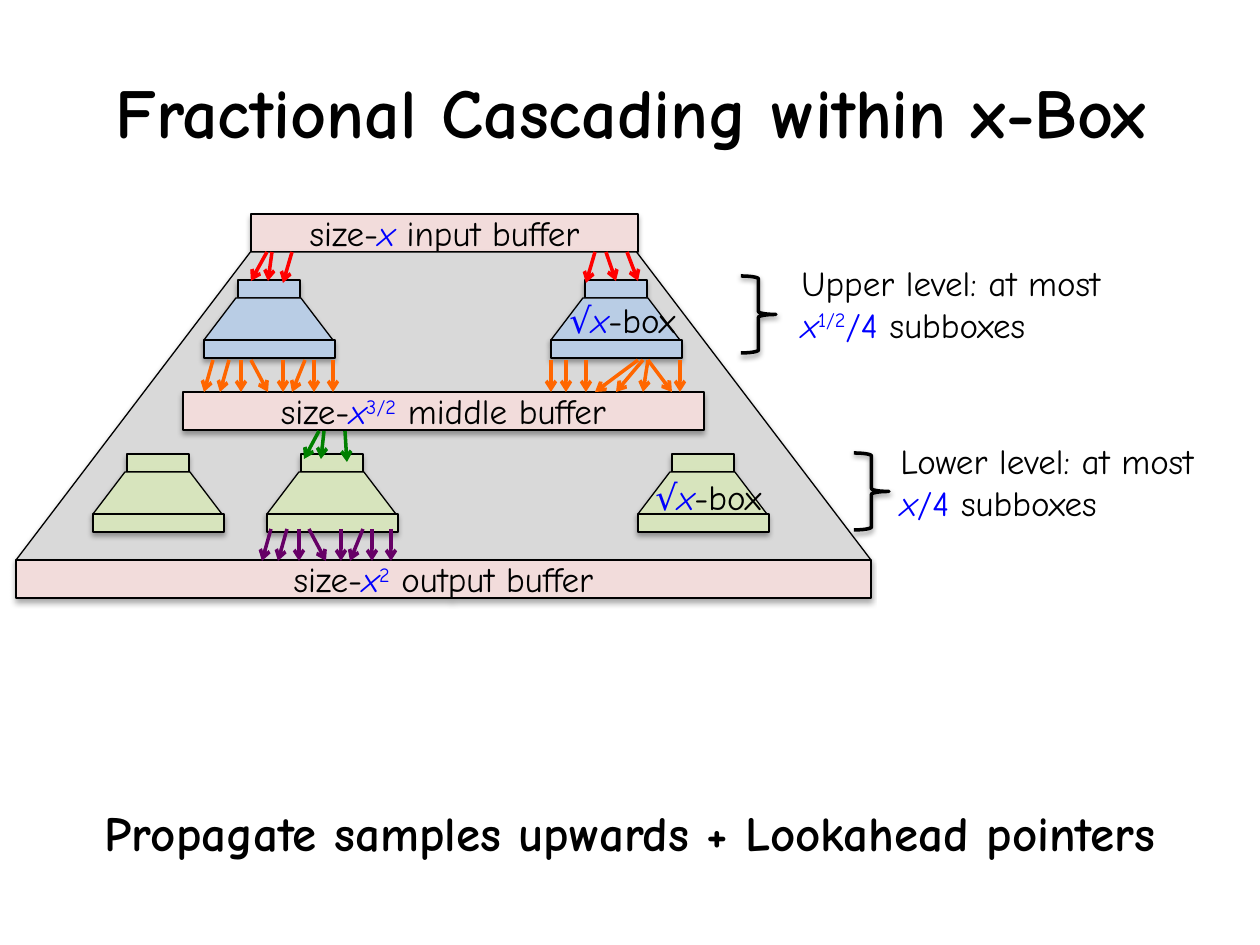
from lxml.etree import SubElement
from pptx import Presentation
from pptx.dml.color import RGBColor
from pptx.enum.shapes import MSO_CONNECTOR, MSO_SHAPE
from pptx.enum.text import MSO_ANCHOR as ANCHOR, PP_ALIGN as ALIGN
from pptx.oxml.ns import qn
from pptx.util import Emu, Pt

SCALE = 914400 // 126
FONT = "Comic Neue"
BLACK, BLUE = "000000", "0000FF"
PINK, GRAY, SKY, GREEN = "F2DCDB", "D9D9D9", "B9CDE5", "D7E4BD"
SLOPE = 0.761

X = ("x", BLUE, True, False)
SQRT_BOX = [("√", BLUE, False, False), X, ("-box", BLACK, False, False)]
FAN = [(213, 204), (229, 220), (241, 241), (251, 268),
       (283, 283), (305, 292), (314, 314), (333, 333)]
RIGHT_FAN = [(586, 586), (638, 595), (643, 616), (648, 643),
             (648, 672), (566, 566), (551, 551), (680, 680)]


def px(n):
    return Emu(n * SCALE)


def color(hex_text):
    return RGBColor.from_string(hex_text)


def plain(text):
    return (text, BLACK, False, False)


def blue(text, raised=False):
    return (text, BLUE, False, raised)


def write(tf, runs, size=20, align=ALIGN.LEFT, bold=False):
    p = tf.paragraphs[0]
    p.alignment = align
    p.font.name, p.font.size, p.font.bold = FONT, Pt(size), bold
    for text, hex_text, italic, raised in runs:
        r = p.add_run()
        r.text = text
        r.font.color.rgb = color(hex_text)
        r.font.italic = italic
        if raised:
            r.font._element.set("baseline", "30000")
    return p


def add_text(s, box, runs, wrap=True, anchor=ANCHOR.TOP, **style):
    tf = s.shapes.add_textbox(*map(px, box)).text_frame
    tf.word_wrap = wrap
    tf.vertical_anchor = anchor
    return write(tf, runs, **style)


def add_shadow(sp, alpha):
    sp.shadow.inherit = False
    effects = sp._element.spPr.find(qn("a:effectLst"))
    shadow = SubElement(effects, qn("a:outerShdw"), blurRad="39370", dist="22860",
                        dir="5400000", rotWithShape="0")
    tint = SubElement(shadow, qn("a:srgbClr"), val=BLACK)
    SubElement(tint, qn("a:alpha"), val=str(alpha * 1000))


def add_block(parent, kind, box, fill):
    sp = parent.shapes.add_shape(kind, *map(px, box))
    sp.fill.solid()
    sp.fill.fore_color.rgb = color(fill)
    sp.line.color.rgb = color(BLACK)
    sp.line.width = Pt(0.75)
    if kind == MSO_SHAPE.TRAPEZOID:
        sp.adjustments[0] = SLOPE
    add_shadow(sp, 35)
    return sp


def add_buffer(s, box, runs):
    tf = add_block(s, MSO_SHAPE.RECTANGLE, box, PINK).text_frame
    tf.vertical_anchor = ANCHOR.MIDDLE
    write(tf, runs, align=ALIGN.CENTER)


def add_subbox(s, x, y, fill):
    group = s.shapes.add_group_shape()
    add_block(group, MSO_SHAPE.RECTANGLE, (x + 34, y, 62, 18), fill)
    add_block(group, MSO_SHAPE.TRAPEZOID, (x, y + 18, 129, 42), fill)
    add_block(group, MSO_SHAPE.RECTANGLE, (x, y + 60, 131, 18), fill)


def add_brace(s, x, y):
    sp = s.shapes.add_shape(MSO_SHAPE.RIGHT_BRACE, px(x), px(y), px(35), px(77))
    sp.adjustments[0] = 0.083
    sp.fill.background()
    sp.line.color.rgb = color(BLACK)
    sp.line.width = Pt(2)
    add_shadow(sp, 38)


def add_arrows(s, pairs, top, bottom, hex_text, shift=0):
    for x1, x2 in pairs:
        c = s.shapes.add_connector(MSO_CONNECTOR.STRAIGHT, px(x1 + shift), px(top),
                                   px(x2 + shift), px(bottom))
        c.line.color.rgb = color(hex_text)
        c.line.width = Pt(2)
        spPr = c._element.spPr
        SubElement(spPr.find(qn("a:ln")), qn("a:tailEnd"), type="arrow")
        SubElement(spPr, qn("a:effectLst"))


def main():
    prs = Presentation()
    prs.slide_width, prs.slide_height = px(1260), px(945)
    s = prs.slides.add_slide(prs.slide_layouts[6])

    add_text(s, (9, 6, 1244, 210), [plain("Fractional Cascading within x-Box")],
             anchor=ANCHOR.MIDDLE, size=40, align=ALIGN.CENTER, bold=True)

    add_buffer(s, (251, 214, 387, 38), [plain("size-"), X, plain(" input buffer")])
    add_block(s, MSO_SHAPE.TRAPEZOID, (16, 252, 855, 308), GRAY)
    add_buffer(s, (16, 560, 855, 38),
               [plain("size-"), X, blue("2", True), plain(" output buffer")])
    add_buffer(s, (183, 392, 521, 38),
               [plain("size-"), X, blue("3/2", True), plain(" middle buffer")])

    for y, fill, lefts in [(280, SKY, (204, 551)), (454, GREEN, (93, 267, 638))]:
        for x in lefts:
            add_subbox(s, x, y, fill)
    for x, y in [(557, 292), (643, 469)]:
        add_text(s, (x, y, 144, 55), SQRT_BOX, wrap=False)

    add_text(s, (789, 255, 372, 97),
             [plain("Upper level: at most "), X, blue("1/2", True), blue("/4 "),
              plain("subboxes")])
    add_text(s, (888, 433, 372, 97),
             [plain("Lower level: at most "), X, blue("/4 "), plain("subboxes")])
    add_brace(s, 741, 276)
    add_brace(s, 854, 453)

    add_arrows(s, [(267, 251), (272, 268), (606, 616), (627, 638)], 252, 281, "FF0000")
    add_arrows(s, [(292, 283), (595, 586)], 252, 283, "FF0000")
    add_arrows(s, FAN + RIGHT_FAN, 360, 392, "FF6600")
    add_arrows(s, [(319, 304), (324, 321)], 431, 459, "008000")
    add_arrows(s, [(345, 347)], 431, 462, "008000")
    add_arrows(s, FAN, 529, 561, "660066", shift=58)

    p = add_text(s, (0, 796, 1260, 101),
                 [plain("Propagate samples upwards + Lookahead pointers")],
                 size=28, align=ALIGN.CENTER, bold=True)
    p.space_before = Pt(5.6)
    prs.save("out.pptx")


if __name__ == "__main__":
    main()
